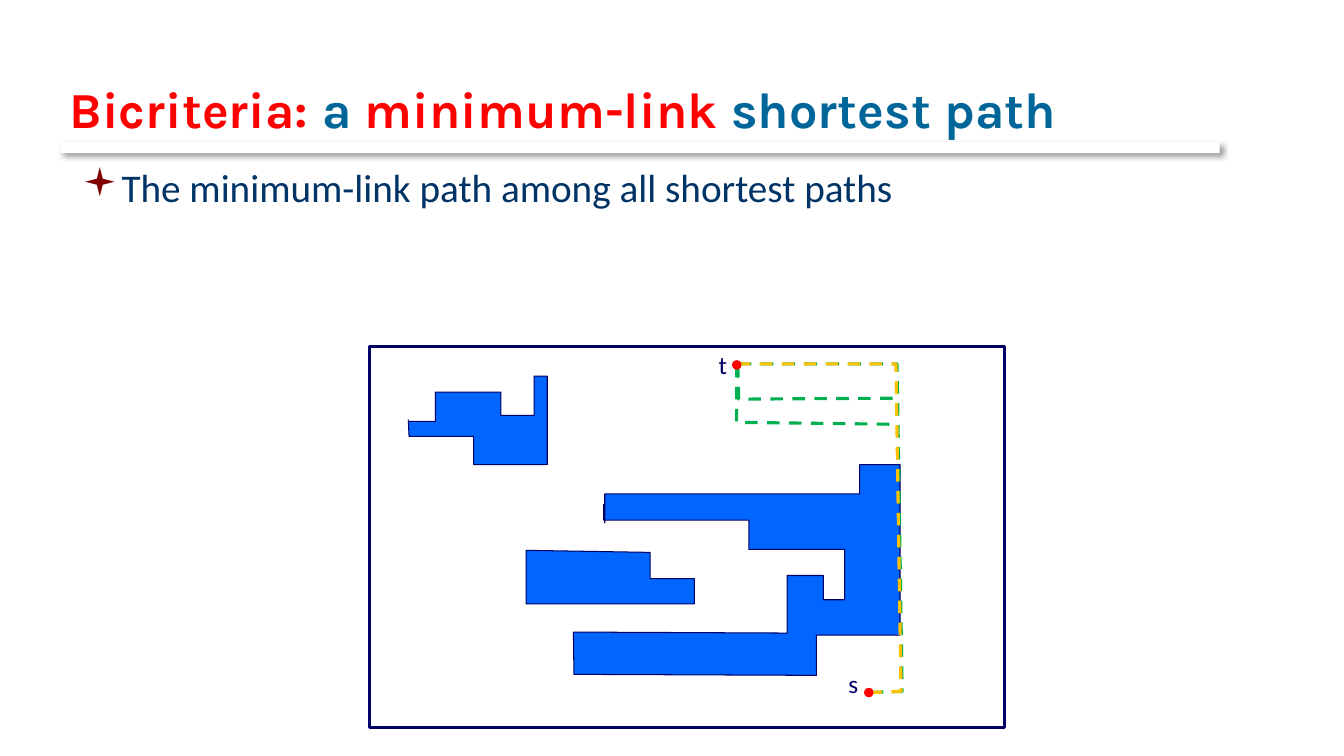
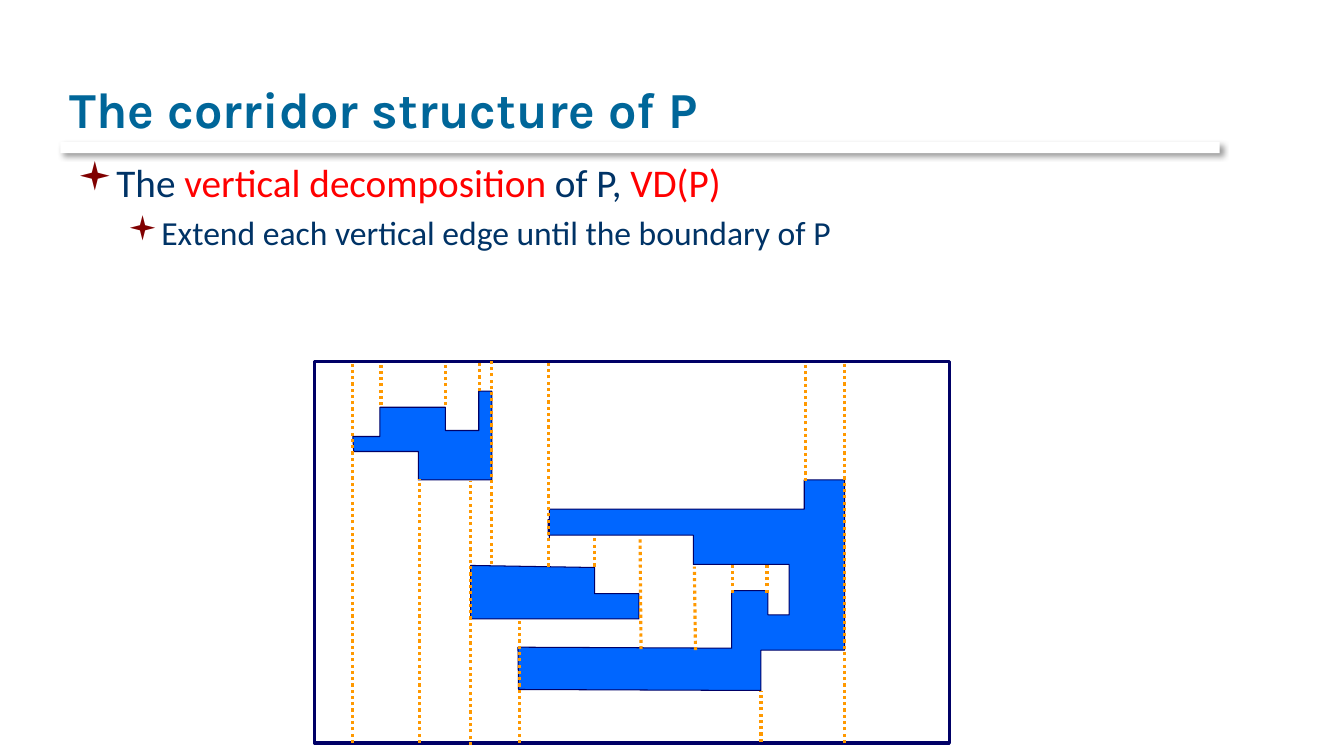
from lxml import etree
from pptx import Presentation
from pptx import util as u
from pptx.dml.color import RGBColor
from pptx.enum import dml, shapes, text
from pptx.oxml import ns

Pt = u.Pt
TEAL, RED, NAVY, BLUE = "006699", "FF0000", "003366", "0066FF"
INK, GREEN, AMBER, ORANGE = "000066", "00B050", "FFC000", "FF9900"
MAROON, WHITE, BLACK = "800000", "FFFFFF", "000000"
DASH, DOT = dml.MSO_LINE.DASH, dml.MSO_LINE.ROUND_DOT
FRAME_W, FRAME_H = 453.6, 272.2

OBSTACLES = [
    [(27.4, 52), (28, 64), (74.2, 64), (74.2, 84.2), (126.7, 84.2),
     (126.7, 20.9), (117.4, 20.9), (117.4, 49), (93.6, 49), (93.6, 32.4),
     (46.8, 32.4), (46.8, 53.3), (27.4, 53.3)],
    [(111.6, 145.4), (200.2, 146.9), (200.2, 165.6), (231.8, 165.6),
     (231.8, 183.6), (111.6, 183.6), (111.6, 145.4)],
    [(167, 112.3), (167, 123.8), (270.7, 123.8), (270.7, 144.7),
     (339.1, 144.7), (339.1, 180.7), (324, 180.7), (324, 163.4),
     (298.1, 163.4), (298.1, 204.5), (145.4, 203.8), (145.8, 234),
     (319, 234.7), (319, 205.9), (378.7, 205.9), (378.7, 84.2),
     (349.9, 84.2), (349.9, 105.1), (167.8, 105.1), (167.8, 126)],
]
PATHS = [
    (GREEN, [(263.5, 12.2), (376.6, 12.2), (380.2, 246.2), (354.2, 247)]),
    (GREEN, [(262.8, 13), (263.5, 37.4), (376.6, 36.7)]),
    (GREEN, [(262, 13), (262, 54), (377.3, 55.4)]),
    (AMBER, [(262.8, 12.2), (375.8, 12.2), (379.4, 246.2), (354.2, 247)]),
]
ENDPOINTS = [("t", 242, -1.4, 262.1, 13), ("s", 334.8, 226, 356.4, 247)]
EXTENSIONS = [
    (167, 146.2, 167, 0), (126.7, 144.7, 126.7, -0.7),
    (378.7, 272.2, 378.7, -0.7), (27.4, 272.2, 27.4, -0.7),
    (111.6, 273.6, 111.6, 85), (74.9, 272.2, 74.9, 83.5),
    (146.2, 272.2, 146.2, 184.3), (319, 271.4, 319, 235.4),
    (233.3, 205.2, 232.6, 126), (272.2, 205.9, 271.4, 146.2),
    (200.2, 146.2, 200.2, 126), (298.8, 164.9, 298.8, 144.7),
    (323.3, 164.9, 323.3, 144.7), (350.6, 85, 350.6, 0.7),
    (93.6, 31, 93.6, 1.4), (47.5, 31, 47.5, 1.4), (118.1, 20.9, 118.1, 0),
]


def rgb(value):
    return RGBColor.from_string(value)


def sub(parent, tag, **attrs):
    return etree.SubElement(parent, ns.qn(tag), attrs)


class Deck:
    def __init__(self):
        self.prs = Presentation()
        self.prs.slide_width, self.prs.slide_height = Pt(960), Pt(540)

    def slide(self, title):
        self.s = self.prs.slides.add_slide(self.prs.slide_layouts[6])
        self.x0 = self.y0 = 0
        self.rule()
        tf = self.textbox(42.5, 12.2, 815.8, 90)
        tf.vertical_anchor = text.MSO_ANCHOR.BOTTOM
        for r in self.runs(tf.paragraphs[0], title, 36, "Karla"):
            r.font.bold = True
            r._r.get_or_add_rPr().set("spc", "10")

    def rule(self):
        sp = self.shape(shapes.MSO_SHAPE.RECTANGLE, 43.2, 101.5, 828, 7.9, fill=WHITE)
        effects = sp._element.spPr.find(ns.qn("a:effectLst"))
        shadow = sub(effects, "a:outerShdw", blurRad=str(Pt(4)), dist=str(Pt(3)),
                     dir="2700000", algn="ctr", rotWithShape="0")
        sub(sub(shadow, "a:srgbClr", val=BLACK), "a:alpha", val="40000")

    def textbox(self, x, y, w, h, wrap=True):
        sp = self.s.shapes.add_textbox(Pt(self.x0 + x), Pt(self.y0 + y), Pt(w), Pt(h))
        sp.text_frame.word_wrap = wrap
        return sp.text_frame

    def runs(self, p, parts, size, font="Calibri"):
        for words, color in parts:
            r = p.add_run()
            r.text = words
            r.font.size, r.font.name = Pt(size), font
            r.font.color.rgb = rgb(color)
        return p.runs

    def bullets(self, x, y, w, h, items):
        tf = self.textbox(x, y, w, h)
        for i, (level, parts) in enumerate(items):
            p = tf.add_paragraph() if i else tf.paragraphs[0]
            size, left, hang = ((28, 27, 27), (24, 58.5, 22.5))[level]
            p.level, p.space_before = level, Pt(size * 0.2)
            pPr = p._p.get_or_add_pPr()
            pPr.set("marL", str(Pt(left)))
            pPr.set("indent", str(-Pt(hang)))
            sub(sub(pPr, "a:buClr"), "a:srgbClr", val=MAROON)
            sub(pPr, "a:buFont", typeface="Wingdings")
            sub(pPr, "a:buChar", char="▪")
            self.runs(p, parts, size)

    def style(self, sp, fill, line, width, dash=None):
        sp.shadow.inherit = False
        if fill:
            sp.fill.solid()
            sp.fill.fore_color.rgb = rgb(fill)
        else:
            sp.fill.background()
        if line:
            self.stroke(sp.line, line, width, dash)
        else:
            sp.line.fill.background()
        return sp

    def stroke(self, ln, color, width, dash=None):
        ln.color.rgb, ln.width = rgb(color), Pt(width)
        if dash:
            ln.dash_style = dash

    def shape(self, kind, x, y, w, h, fill=None, line=None, width=0.75):
        sp = self.s.shapes.add_shape(
            kind, Pt(self.x0 + x), Pt(self.y0 + y), Pt(w), Pt(h))
        return self.style(sp, fill, line, width)

    def outline(self, points, fill=None, line=INK, width=0.75, dash=None):
        pts = [(Pt(self.x0 + x), Pt(self.y0 + y)) for x, y in points]
        fb = self.s.shapes.build_freeform(*pts[0])
        fb.add_line_segments(pts[1:], close=points[0] == points[-1])
        self.style(fb.convert_to_shape(), fill, line, width, dash)

    def dotted(self, x1, y1, x2, y2):
        c = self.s.shapes.add_connector(
            shapes.MSO_CONNECTOR.STRAIGHT, Pt(self.x0 + x1), Pt(self.y0 + y1),
            Pt(self.x0 + x2), Pt(self.y0 + y2))
        self.stroke(c.line, ORANGE, 2.25, DOT)
        sub(c._element.spPr, "a:effectLst")

    def endpoint(self, name, x, y, cx, cy):
        tf = self.textbox(x, y, 21, 29, wrap=False)
        self.runs(tf.paragraphs[0], [(name, INK)], 18)
        self.shape(shapes.MSO_SHAPE.OVAL, cx - 3, cy - 3, 6, 6, RED, RED)

    def domain(self, x, y):
        self.x0, self.y0 = x, y
        self.shape(shapes.MSO_SHAPE.RECTANGLE, 0, 0, FRAME_W, FRAME_H, line=INK, width=2.25)
        for points in OBSTACLES:
            self.outline(points, fill=BLUE)


def main():
    d = Deck()

    d.slide([("Bicriteria: ", RED), ("a ", TEAL), ("minimum-link ", RED),
             ("shortest path", TEAL)])
    d.bullets(51.8, 113, 641.5, 154.8, [
        (0, [("The minimum-link path among all shortest paths", NAVY)])])
    d.domain(264.2, 247.7)
    for color, points in PATHS:
        d.outline(points, line=color, width=2.25, dash=DASH)
    for endpoint in ENDPOINTS:
        d.endpoint(*endpoint)

    d.slide([("The corridor structure of P", TEAL)])
    d.bullets(48.2, 109.4, 645, 121, [
        (0, [("The ", NAVY), ("vertical decomposition", RED), (" of P, ", NAVY),
             ("VD(P)", RED)]),
        (1, [("Extend each vertical edge until the boundary of P", NAVY)])])
    d.domain(224.6, 258.5)
    for extension in EXTENSIONS:
        d.dotted(*extension)

    d.prs.save("out.pptx")


if __name__ == "__main__":
    main()
